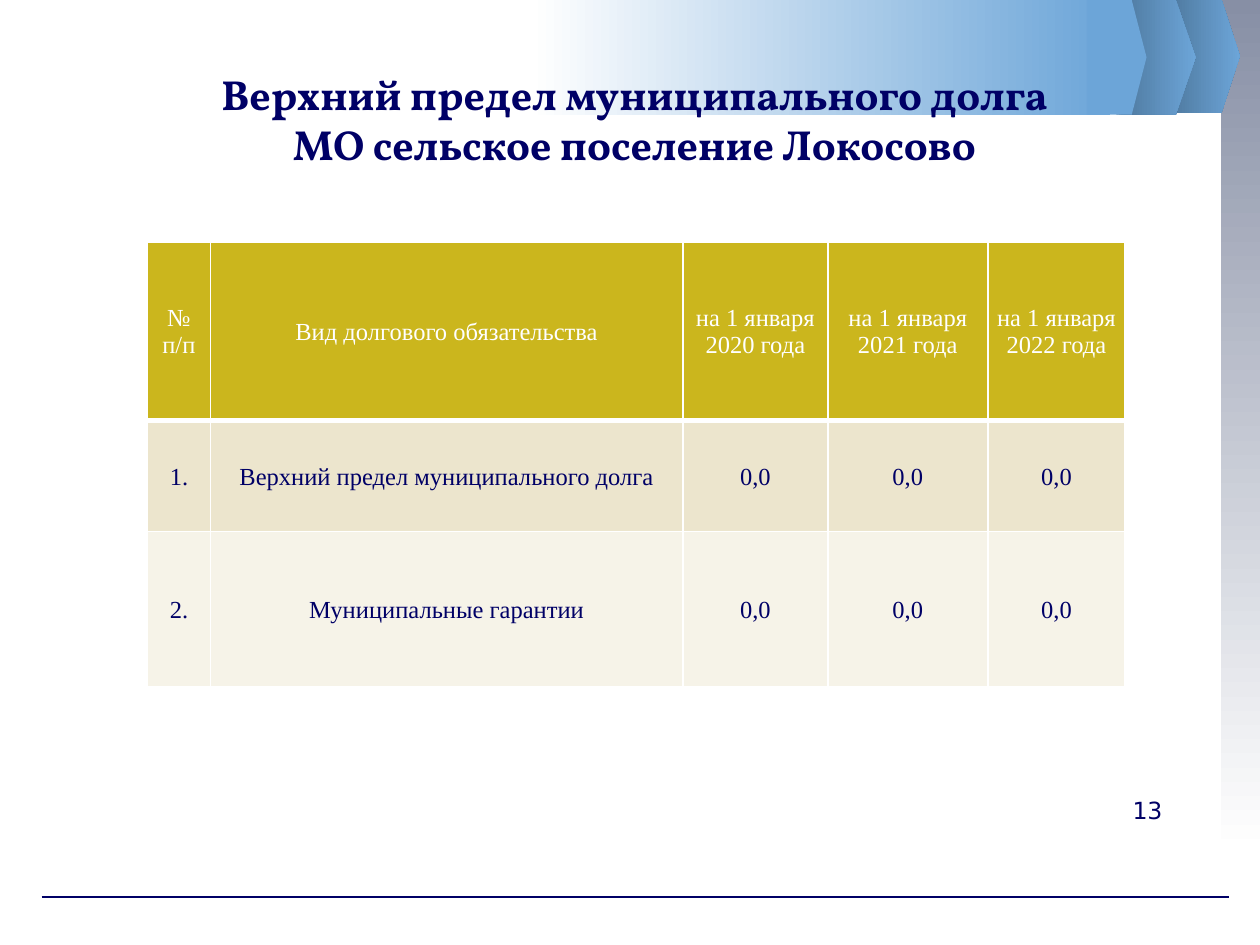
from dataclasses import dataclass

from pptx import Presentation
from pptx import util as u
from pptx.dml.color import RGBColor
from pptx.enum import shapes, text
from pptx.oxml import parse_xml
from pptx.oxml.ns import nsdecls


@dataclass(frozen=True)
class Theme:
    navy: str = "000066"
    white: str = "FFFFFF"
    slate: str = "878FA5"
    steel: str = "4D769B"
    sky: str = "6CA5D8"
    header: str = "CBB61D"
    bands: tuple = ("ECE5CD", "F6F3E8")
    title_font: str = "Vollkorn"
    table_font: str = "Times New Roman"
    number_font: str = "DejaVu Sans"
    title_size: float = 24
    table_size: float = 14
    number_size: float = 13.5


class SlideBuilder:
    def __init__(self, slide, theme):
        self.slide = slide
        self.theme = theme

    def set_font(self, paragraph, name, size, color, bold=False):
        font = paragraph.font
        font.name, font.size, font.bold = name, u.Pt(size), bold
        font.color.rgb = RGBColor.from_string(color)

    def panel(self, kind, box, start, end=None, angle=0):
        """A borderless shape, plain or shaded from start to end."""
        shape = self.slide.shapes.add_shape(kind, *map(u.Inches, box))
        shape.shadow.inherit = False
        shape.line.fill.background()
        if end is None:
            shape.fill.solid()
            shape.fill.fore_color.rgb = RGBColor.from_string(start)
        else:
            shape.fill.gradient()
            shape.fill.gradient_angle = angle
            for stop, color in zip(shape.fill.gradient_stops, (start, end)):
                stop.color.rgb = RGBColor.from_string(color)
        return shape

    def arrow_panel(self, box, start, end=None):
        arrow = self.panel(shapes.MSO_SHAPE.PENTAGON, box, start, end)
        arrow.adjustments[0] = 0.25

    def rule(self, left, right, top):
        line = self.slide.shapes.add_connector(
            shapes.MSO_CONNECTOR.STRAIGHT,
            u.Inches(left), u.Inches(top), u.Inches(right), u.Inches(top))
        line.line.color.rgb = RGBColor.from_string(self.theme.navy)
        line.line.width = u.Pt(0.75)
        line._element.spPr.append(parse_xml(f"<a:effectLst {nsdecls('a')}/>"))

    def title(self, box, lines):
        heading = self.slide.shapes.title
        heading.left, heading.top, heading.width, heading.height = map(u.Inches, box)
        frame = heading.text_frame
        frame.auto_size = text.MSO_AUTO_SIZE.NONE
        frame.vertical_anchor = text.MSO_ANCHOR.MIDDLE
        paragraph = frame.paragraphs[0]
        for index, line in enumerate(lines):
            if index:
                paragraph.add_line_break()
            paragraph.add_run().text = line
        paragraph.alignment = text.PP_ALIGN.CENTER
        self.set_font(paragraph, self.theme.title_font, self.theme.title_size,
                      self.theme.navy, bold=True)
        # Bring the title in front of the header band
        self.slide.shapes._spTree.append(heading._element)

    def label(self, box, words):
        frame = self.slide.shapes.add_textbox(*map(u.Inches, box)).text_frame
        frame.word_wrap = True
        frame.text = words
        self.set_font(frame.paragraphs[0], self.theme.number_font,
                      self.theme.number_size, self.theme.navy)

    def cell_borders(self, cell, bottom):
        properties = cell._tc.get_or_add_tcPr()
        widths = {"lnL": 1, "lnR": 1, "lnT": 1, "lnB": bottom}
        for index, (side, width) in enumerate(widths.items()):
            properties.insert(index, parse_xml(
                f'<a:{side} {nsdecls("a")} w="{u.Pt(width)}"><a:solidFill>'
                f'<a:srgbClr val="{self.theme.white}"/></a:solidFill></a:{side}>'))

    def table(self, left, top, widths, heights, rows):
        theme = self.theme
        grid = self.slide.shapes.add_table(
            len(rows), len(widths), u.Inches(left), u.Inches(top),
            u.Inches(sum(widths)), u.Inches(sum(heights))).table
        for column, width in zip(grid.columns, widths):
            column.width = u.Inches(width)
        for r, (row, height) in enumerate(zip(rows, heights)):
            grid.rows[r].height = u.Inches(height)
            fill = theme.bands[r - 1] if r else theme.header
            color = theme.navy if r else theme.white
            for c, words in enumerate(row):
                cell = grid.cell(r, c)
                cell.text = words
                cell.vertical_anchor = text.MSO_ANCHOR.MIDDLE
                cell.margin_left = cell.margin_right = cell.margin_top = u.Inches(0.01)
                cell.margin_bottom = 0
                cell.fill.solid()
                cell.fill.fore_color.rgb = RGBColor.from_string(fill)
                self.cell_borders(cell, bottom=1 if r else 3)
                paragraph = cell.text_frame.paragraphs[0]
                paragraph.alignment = text.PP_ALIGN.CENTER
                self.set_font(paragraph, theme.table_font, theme.table_size, color)


def main():
    deck = Presentation()
    deck.slide_width, deck.slide_height = u.Inches(10), u.Inches(7.5)
    theme = Theme()
    page = SlideBuilder(deck.slides.add_slide(deck.slide_layouts[5]), theme)
    rectangle = shapes.MSO_SHAPE.RECTANGLE

    # Side strip and bottom rule
    page.panel(rectangle, (9.69, 0, 0.31, 6.77), theme.slate, theme.white, angle=270)
    page.rule(0.33, 9.75, 7.12)

    # Header band with its arrows, from the rightmost one back
    page.arrow_panel((9.25, -0.01, 0.59, 0.91), theme.steel, theme.sky)
    page.arrow_panel((8.86, 0, 0.63, 0.91), theme.steel, theme.sky)
    page.panel(rectangle, (4.21, 0, 4.6, 0.91), theme.white, theme.sky)
    page.arrow_panel((8.63, 0, 0.47, 0.91), theme.sky)

    page.title((1.17, 0.47, 7.73, 0.94),
               ["Верхний предел муниципального долга",
                "МО сельское поселение Локосово"])

    # Debt limits by year
    years = (2020, 2021, 2022)
    obligations = ("Верхний предел муниципального долга", "Муниципальные гарантии")
    header = ["№ п/п", "Вид долгового обязательства"]
    header += [f"на 1 января {year} года" for year in years]
    body = [[f"{number}.", obligation] + ["0,0"] * len(years)
            for number, obligation in enumerate(obligations, 1)]
    page.table(1.17, 1.92, (0.5, 3.75, 1.15, 1.27, 1.09), (1.42, 0.88, 1.23),
               [header] + body)

    # Page number
    page.label((8.89, 6.27, 0.67, 0.57), "13")

    deck.save("out.pptx")


if __name__ == "__main__":
    main()
